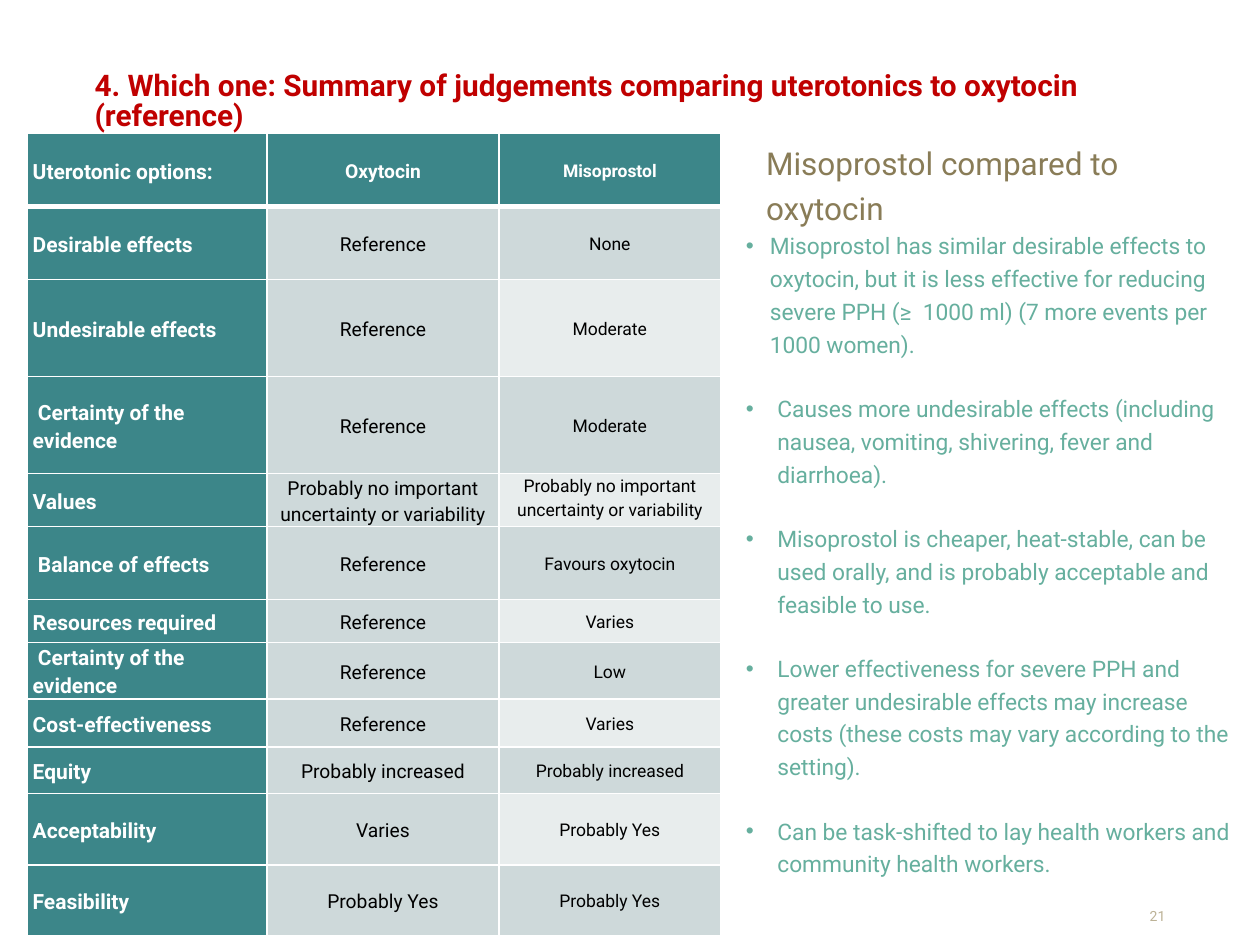
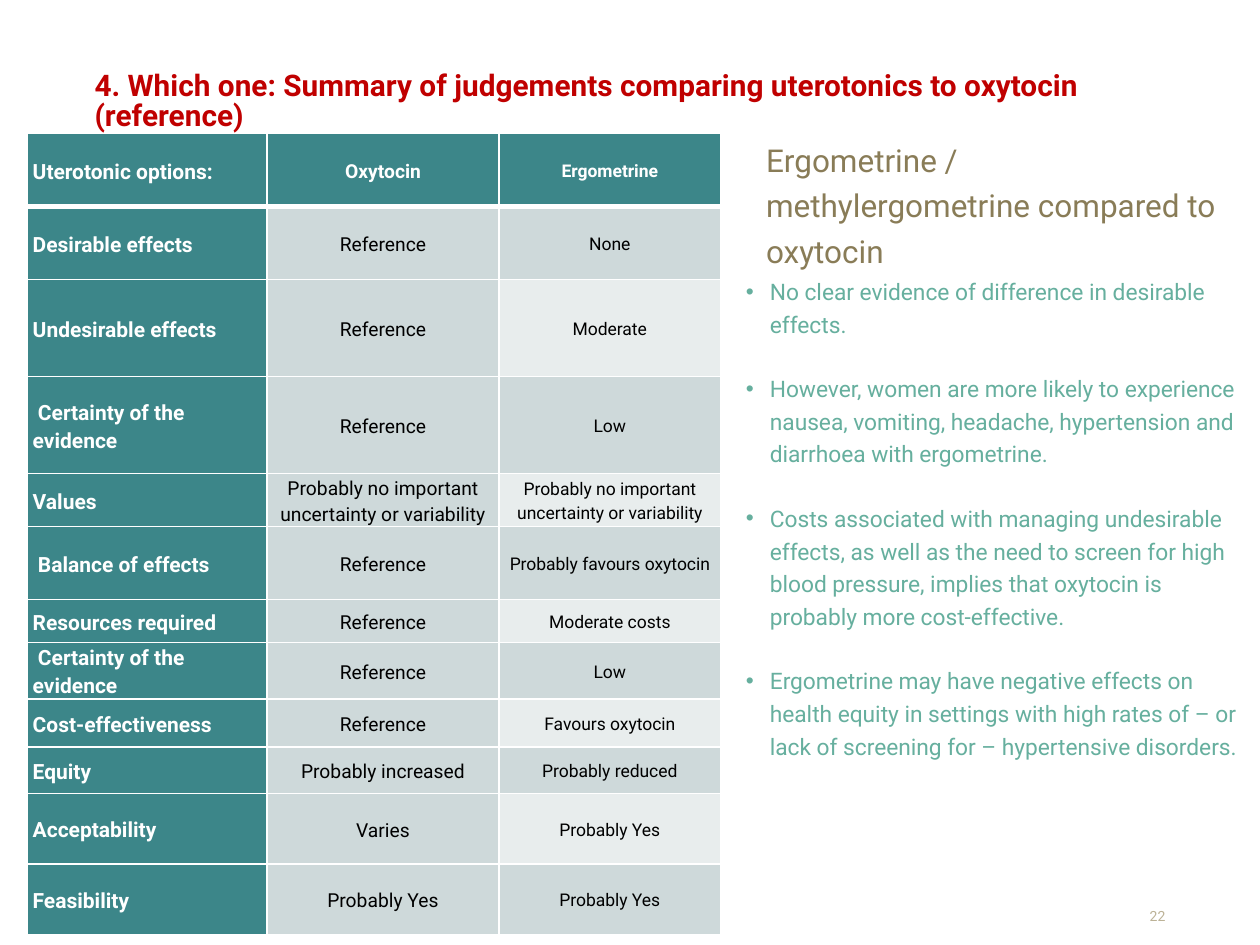
from lxml import etree
from pptx import Presentation, util as u
from pptx.dml.color import RGBColor
from pptx.enum import text
from pptx.oxml import ns

COLORS = {
    "title": "C00000", "heading": "897C57", "bullet": "66AF9E", "number": "BCB296",
    "teal": "3C8689", "band": "CED9DA", "pale": "E8EDED", "white": "FFFFFF", "black": "000000",
}
FONT = "Roboto"
WIDTH, HEIGHT = u.Inches(10), u.Inches(7.5)
COLUMN, ROW = WIDTH / 10, HEIGHT / 7.5
LEFT, CENTER, RIGHT = text.PP_ALIGN.LEFT, text.PP_ALIGN.CENTER, text.PP_ALIGN.RIGHT

TITLE = "4. Which one: Summary of judgements comparing uterotonics to oxytocin (reference)"
TABLE_COLUMNS = [1.9, 1.84, 1.76]
CRITERIA = [
    ("Uterotonic options:", "Oxytocin", 0.58),
    ("Desirable effects", "Reference", 0.58),
    ("Undesirable effects", "Reference", 0.77),
    (" Certainty of the evidence", "Reference", 0.77),
    ("Values", "Probably no important uncertainty or variability", 0.42),
    (" Balance of effects", "Reference", 0.58),
    ("Resources required", "Reference", 0.34),
    (" Certainty of the evidence", "Reference", 0.34),
    ("Cost-effectiveness", "Reference", 0.38),
    ("Equity", "Probably increased", 0.37),
    ("Acceptability", "Varies", 0.56),
    ("Feasibility", "Probably Yes", 0.56),
]
VALUES_ROW, ACCEPTABILITY_ROW = 4, 10

COMPARISONS = [
    {
        "number": "21",
        "judgements": [
            "Misoprostol", "None", "Moderate", "Moderate",
            "Probably no important uncertainty or variability", "Favours oxytocin",
            "Varies", "Low", "Varies", "Probably increased", "Probably Yes", "Probably Yes",
        ],
        "heading": "Misoprostol compared to oxytocin",
        "heading_area": (6.08, 1.08, 3.61, 0.33),
        "points_top": 1.8,
        "indents": [0.19, 0.25, 0.25, 0.25, 0.25],
        "points": [
            "Misoprostol has similar desirable effects to oxytocin, but it is less effective "
            "for reducing severe PPH (≥  1000 ml) (7 more events per 1000 women).",
            "Causes more undesirable effects (including nausea, vomiting, shivering, fever "
            "and diarrhoea).",
            "Misoprostol is cheaper, heat-stable, can be used orally, and is probably "
            "acceptable and feasible to use.",
            "Lower effectiveness for severe PPH and greater undesirable effects may increase "
            "costs (these costs may vary according to the setting).",
            "Can be task-shifted to lay health workers and community health workers.",
        ],
        "values_anchor": text.MSO_ANCHOR.TOP,
        "acceptability_height": 0.57,
    },
    {
        "number": "22",
        "judgements": [
            "Ergometrine", "None", "Moderate", "Low",
            "Probably no important uncertainty or variability", "Probably favours oxytocin",
            "Moderate costs", "Low", "Favours oxytocin", "Probably reduced",
            "Probably Yes", "Probably Yes",
        ],
        "heading": "Ergometrine / methylergometrine compared to oxytocin",
        "heading_area": (6.08, 1.06, 3.61, 0.69),
        "points_top": 2.16,
        "indents": [0.19] * 4,
        "points": [
            "No clear evidence of difference in desirable effects.",
            "However, women are more likely to experience nausea, vomiting, headache, "
            "hypertension and diarrhoea with ergometrine.",
            "Costs associated with managing undesirable effects, as well as the need to "
            "screen for high blood pressure, implies that oxytocin is probably more "
            "cost-effective.",
            "Ergometrine may have negative effects on health equity in settings with high "
            "rates of – or lack of screening for – hypertensive disorders.",
        ],
        "values_anchor": text.MSO_ANCHOR.MIDDLE,
        "acceptability_height": 0.56,
    },
]


def place(left, top, width, height):
    return [u.Emu(round(size)) for size in
            (left * COLUMN, top * ROW, width * COLUMN, height * ROW)]


def write(para, words, size, color, bold=False, align=LEFT, spacing=None):
    para.alignment = align
    para.line_spacing = spacing
    span = para.add_run()
    span.text = words
    span.font.name = FONT
    span.font.size = u.Pt(size)
    span.font.bold = bold
    span.font.color.rgb = RGBColor.from_string(COLORS[color])


def prepare(frame, anchor=text.MSO_ANCHOR.TOP):
    frame.margin_left = frame.margin_right = frame.margin_top = frame.margin_bottom = 0
    frame.word_wrap = True
    frame.auto_size = text.MSO_AUTO_SIZE.NONE
    frame.vertical_anchor = anchor
    return frame


def add_box(page, area, anchor=text.MSO_ANCHOR.TOP):
    return prepare(page.shapes.add_textbox(*place(*area)).text_frame, anchor)


def add_title(page):
    title = page.shapes.title
    title.left, title.top, title.width, title.height = place(0.75, 0.57, 8.5, 0.49)
    write(prepare(title.text_frame).paragraphs[0], TITLE, 17, "title", True, spacing=0.85)


def add_number(page, number):
    frame = add_box(page, (8.93, 7.21, 0.32, 0.13), text.MSO_ANCHOR.BOTTOM)
    write(frame.paragraphs[0], number, 8, "number", align=RIGHT)


def add_bullet(para, indent):
    props = para._p.get_or_add_pPr()
    props.set("marL", str(u.Inches(indent)))
    props.set("indent", str(-u.Inches(indent)))
    etree.SubElement(props, ns.qn("a:buFont"), typeface="Arial")
    etree.SubElement(props, ns.qn("a:buChar"), char="•")


def add_points(page, top, points, indents):
    frame = add_box(page, (5.92, top, 3.91, 2.37))
    for index, (words, indent) in enumerate(zip(points, indents)):
        para = frame.add_paragraph() if index else frame.paragraphs[0]
        write(para, words, 13, "bullet", spacing=1.2)
        para.space_before, para.space_after = u.Pt(6), u.Pt(12)
        add_bullet(para, indent)


def add_borders(cell, row):
    thick = {0: "lnB", 1: "lnT"}.get(row)
    props = cell._tc.get_or_add_tcPr()
    for index, side in enumerate(("lnL", "lnR", "lnT", "lnB")):
        line = etree.Element(ns.qn("a:" + side), w=str(u.Pt(3 if side == thick else 1)))
        fill = etree.SubElement(line, ns.qn("a:solidFill"))
        etree.SubElement(fill, ns.qn("a:srgbClr"), val=COLORS["white"])
        props.insert(index, line)


def fill_cell(cell, words, row, column):
    label = row == 0 or column == 0
    pale = column == 2 and row % 2 == 0
    shade = "teal" if label else "pale" if pale else "band"
    cell.margin_left = cell.margin_right = u.Inches(0.04)
    cell.margin_top = cell.margin_bottom = 0
    cell.vertical_anchor = text.MSO_ANCHOR.MIDDLE
    cell.fill.solid()
    cell.fill.fore_color.rgb = RGBColor.from_string(COLORS[shade])
    write(cell.text_frame.paragraphs[0], words, 12 - column, "white" if label else "black",
          label, CENTER if column else LEFT, 1.15)
    add_borders(cell, row)


def add_judgements(page, comparison):
    heights = [height for _, _, height in CRITERIA]
    heights[ACCEPTABILITY_ROW] = comparison["acceptability_height"]
    area = place(0.22, 1.06, sum(TABLE_COLUMNS), sum(heights))
    table = page.shapes.add_table(len(heights), len(TABLE_COLUMNS), *area).table
    table.first_row = table.horz_banding = False
    for column, width in zip(table.columns, TABLE_COLUMNS):
        column.width = u.Emu(round(width * COLUMN))
    for row, (label, reference, _) in enumerate(CRITERIA):
        table.rows[row].height = u.Emu(round(heights[row] * ROW))
        for column, words in enumerate((label, reference, comparison["judgements"][row])):
            fill_cell(table.cell(row, column), words, row, column)
    table.cell(VALUES_ROW, 2).vertical_anchor = comparison["values_anchor"]


def add_comparison(deck, comparison):
    page = deck.slides.add_slide(deck.slide_layouts.get_by_name("Title Only"))
    add_number(page, comparison["number"])
    add_judgements(page, comparison)
    add_title(page)
    heading = add_box(page, comparison["heading_area"])
    write(heading.paragraphs[0], comparison["heading"], 18, "heading", spacing=1.2)
    add_points(page, comparison["points_top"], comparison["points"], comparison["indents"])


def main():
    deck = Presentation()
    deck.slide_width, deck.slide_height = WIDTH, HEIGHT
    for comparison in COMPARISONS:
        add_comparison(deck, comparison)
    deck.save("out.pptx")


if __name__ == "__main__":
    main()
